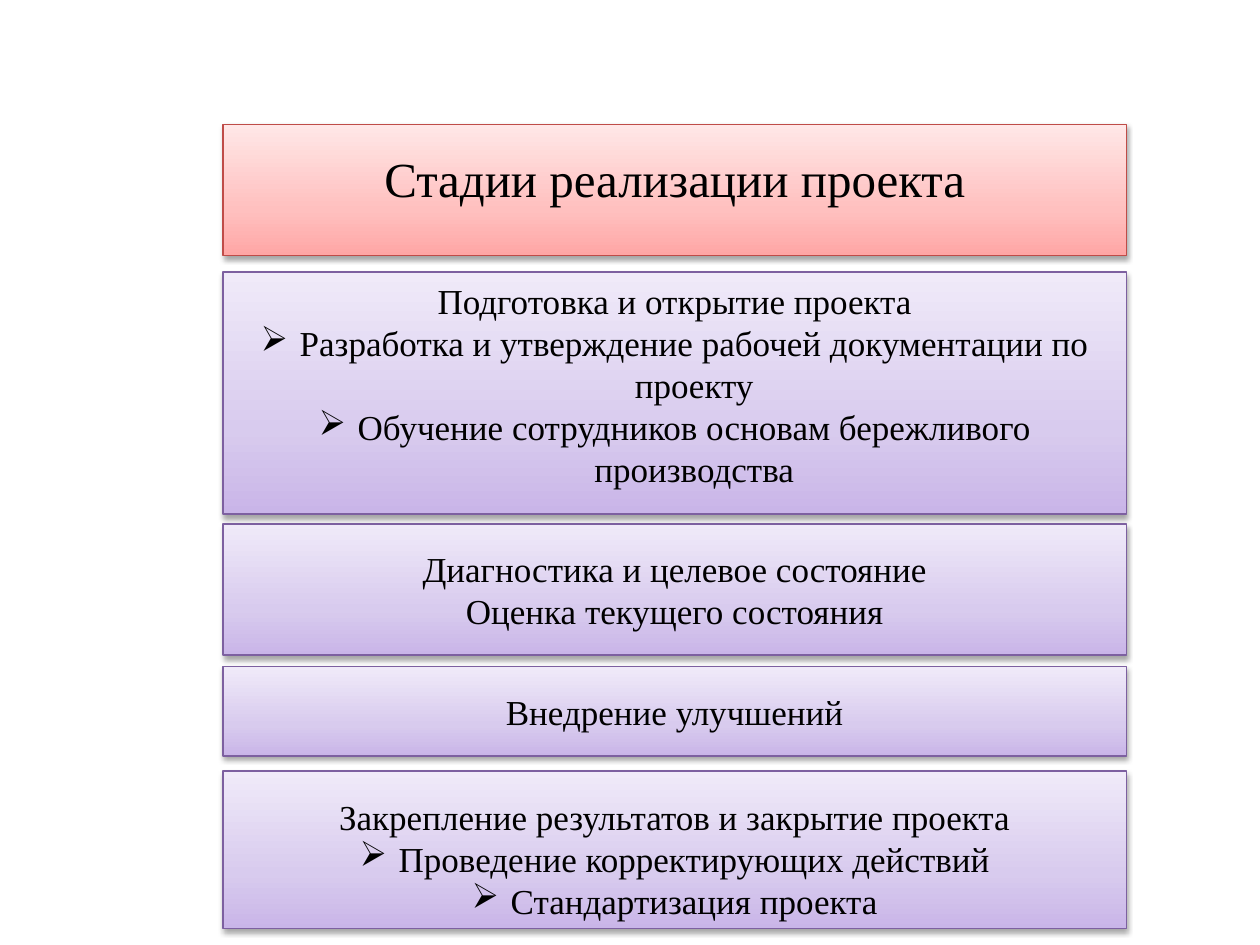
from copy import deepcopy

from lxml import etree
from pptx import Presentation
from pptx.dml.color import RGBColor
from pptx.enum.shapes import MSO_SHAPE
from pptx.enum.text import MSO_ANCHOR, PP_ALIGN
from pptx.oxml.ns import qn
from pptx.util import Inches, Pt

RECTANGLE = MSO_SHAPE.RECTANGLE
MIDDLE = MSO_ANCHOR.MIDDLE
CENTER = PP_ALIGN.CENTER

FONT = "Times New Roman"
LEFT, WIDTH = 1.77, 7.17
MARGIN = 0.05
BULLET_INDENT = 0.31
GRADIENT_POSITIONS = (0, 0.35, 1)

# Gradient colours from bottom to top, then the outline
RED = (("FFA6A5", "FFC0BF", "FFE7E7"), "BF4C48")
PURPLE = (("C9B5E8", "D8CBEE", "F0EAF9"), "7D60A0")

# Top, height, space above the text, space below it, heading lines, bulleted lines
STAGES = [
    (2.16, 1.92, 0, 0.13, ["Подготовка и открытие проекта"],
     ["Разработка и утверждение рабочей документации по проекту",
      "Обучение сотрудников основам бережливого производства"]),
    (4.16, 1.04, 0.13, 0.13,
     ["Диагностика и целевое состояние", "Оценка текущего состояния"], []),
    (5.29, 0.71, 0.13, 0.13, ["Внедрение улучшений"], []),
    (6.12, 1.25, 0.13, 0, ["Закрепление результатов и закрытие проекта"],
     ["Проведение корректирующих действий", "Стандартизация проекта"]),
]


def color(value):
    return RGBColor.from_string(value)


def fill_gradient(shape, colors):
    shape.fill.gradient()
    shape.fill.gradient_angle = 90
    last_stop = shape._element.spPr.findall(".//" + qn("a:gs"))[-1]
    last_stop.addnext(deepcopy(last_stop))
    for stop, position, value in zip(shape.fill.gradient_stops, GRADIENT_POSITIONS, colors):
        stop.position = position
        stop.color.rgb = color(value)


def add_shadow(shape):
    shape.shadow.inherit = False
    effects = shape._element.spPr.find(qn("a:effectLst"))
    shadow = etree.SubElement(effects, qn("a:outerShdw"), blurRad=str(Pt(3)),
                              dist=str(Pt(1.8)), dir="5400000", rotWithShape="0")
    black = etree.SubElement(shadow, qn("a:srgbClr"), val="000000")
    etree.SubElement(black, qn("a:alpha"), val="35000")


def add_bullet(paragraph):
    properties = paragraph._p.get_or_add_pPr()
    properties.set("marL", str(Inches(BULLET_INDENT)))
    properties.set("indent", str(-Inches(BULLET_INDENT)))
    etree.SubElement(properties, qn("a:buChar"), char="➢")


def add_block(slide, top, height, space_above, space_below, headings, bullets, palette, size):
    shape = slide.shapes.add_shape(RECTANGLE, Inches(LEFT), Inches(top),
                                   Inches(WIDTH), Inches(height))
    gradient, outline = palette
    fill_gradient(shape, gradient)
    shape.line.color.rgb = color(outline)
    shape.line.width = Pt(0.75)
    add_shadow(shape)

    frame = shape.text_frame
    frame.word_wrap = True
    frame.vertical_anchor = MIDDLE
    frame.margin_left = frame.margin_right = Inches(MARGIN)
    frame.margin_top = Inches(MARGIN + space_above)
    frame.margin_bottom = Inches(MARGIN + space_below)
    for index, text in enumerate(headings + bullets):
        paragraph = frame.add_paragraph() if index else frame.paragraphs[0]
        paragraph.text = text
        paragraph.alignment = CENTER
        if index >= len(headings):
            add_bullet(paragraph)
        paragraph.font.name = FONT
        paragraph.font.size = Pt(size)
        paragraph.font.color.rgb = color("000000")


def main():
    presentation = Presentation()
    presentation.slide_width = Inches(10)
    presentation.slide_height = Inches(7.5)
    slide = presentation.slides.add_slide(presentation.slide_layouts[6])
    add_block(slide, 0.99, 1.04, 0.13, 0.32, ["Стадии реализации проекта"], [], RED, 28)
    for stage in STAGES:
        add_block(slide, *stage, PURPLE, 20)
    presentation.save("out.pptx")


if __name__ == "__main__":
    main()
